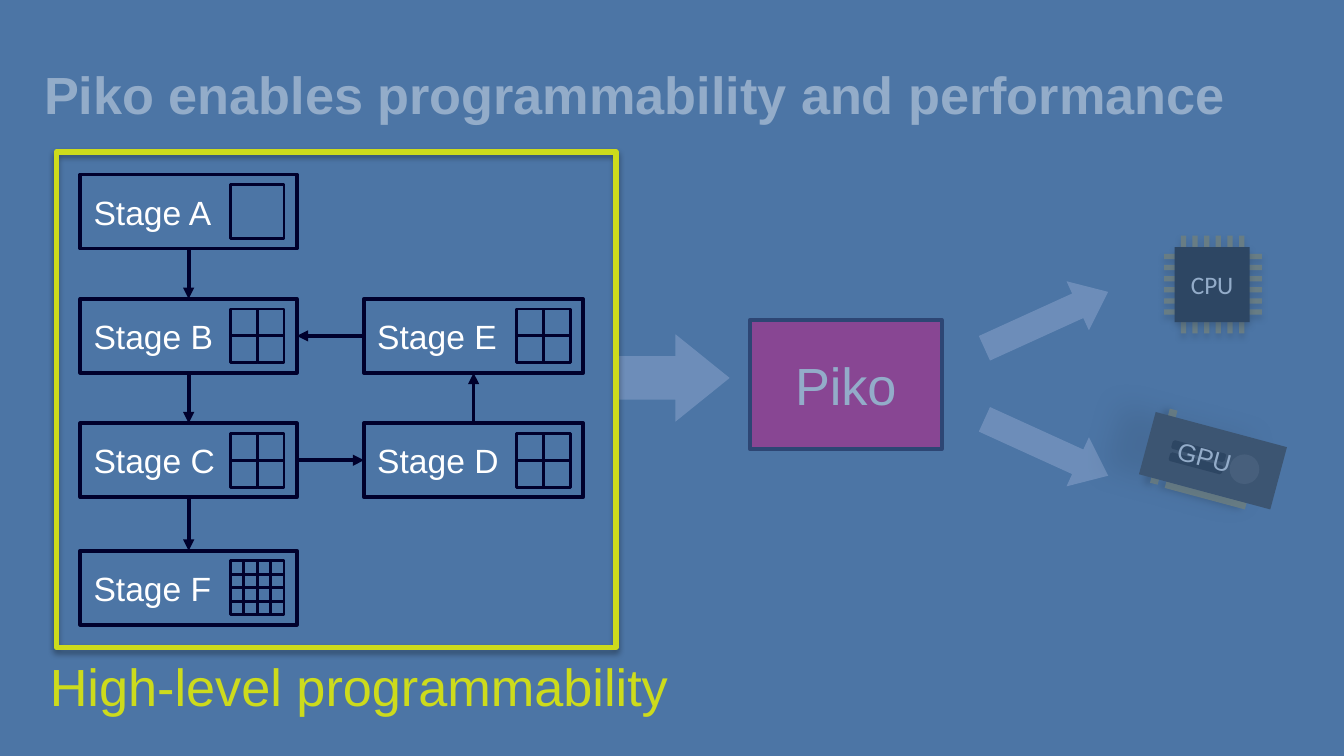
import pptx
import pptx.dml.color
import pptx.enum.shapes
import pptx.enum.text
import pptx.oxml.ns
import pptx.util
from lxml import etree

Cm, Pt = pptx.util.Cm, pptx.util.Pt
qn = pptx.oxml.ns.qn
SHAPE = pptx.enum.shapes.MSO_SHAPE
ALIGN = pptx.enum.text.PP_ALIGN
ANCHOR = pptx.enum.text.MSO_ANCHOR

BLUE, NAVY, WHITE, LIME = "4C75A5", "00002C", "FFFFFF", "CDDB1C"
PALE, PURPLE, GOLD, DARK, BLACK = "A0B3D8", "E30078", "948A54", "262626", "000000"
SOFT = (BLACK, 32, 3.5, 2.2, 90)
SIDE = (BLACK, 40, 4, 3, 180)


def rgb(color):
    return pptx.dml.color.RGBColor.from_string(color)


class Deck:
    """Holds the current slide and the shared style."""

    def __init__(self, slide, font="Arial"):
        self.slide = slide
        self.shapes = slide.shapes
        self.font = font

    def box(self, x, y, w, h, fill=None, line=None, width=2, kind=SHAPE.RECTANGLE,
            rot=0, shadow=None, alpha=None):
        sp = self.shapes.add_shape(kind, Cm(x), Cm(y), Cm(w), Cm(h))
        sp.rotation = rot
        sp.shadow.inherit = False
        if fill:
            sp.fill.solid()
            sp.fill.fore_color.rgb = rgb(fill)
        else:
            sp.fill.background()
        if line:
            sp.line.color.rgb = rgb(line)
            sp.line.width = Pt(width)
        else:
            sp.line.fill.background()
        if alpha:
            clr = sp.element.spPr.find(".//" + qn("a:srgbClr"))
            etree.SubElement(clr, qn("a:alpha"), val=str(alpha * 1000))
        if shadow:
            self.cast(sp, *shadow)
        return sp

    def cast(self, sp, color, alpha, blur, dist, angle):
        effects = sp.element.spPr.find(qn("a:effectLst"))
        outer = etree.SubElement(
            effects, qn("a:outerShdw"), blurRad=str(Pt(blur)), dist=str(Pt(dist)),
            dir=str(angle * 60000), algn="ctr", rotWithShape="0")
        clr = etree.SubElement(outer, qn("a:srgbClr"), val=color)
        etree.SubElement(clr, qn("a:alpha"), val=str(alpha * 1000))

    def put_text(self, sp, text, size, color=WHITE, align=ALIGN.CENTER,
                 anchor=ANCHOR.MIDDLE, bold=False, font=None, wrap=True):
        tf = sp.text_frame
        tf.text = text
        tf.word_wrap = wrap
        tf.vertical_anchor = anchor
        p = tf.paragraphs[0]
        p.alignment = align
        p.font.name = font or self.font
        p.font.size = Pt(size)
        p.font.bold = bold
        p.font.color.rgb = rgb(color)

    def title(self, text, x, y, w, h):
        sp = self.shapes.title
        sp.left, sp.top, sp.width, sp.height = Cm(x), Cm(y), Cm(w), Cm(h)
        self.put_text(sp, text, 28, align=ALIGN.LEFT, bold=True)
        sp.text_frame.auto_size = pptx.enum.text.MSO_AUTO_SIZE.NONE

    def label(self, text, x, y, w, h, size, rot=0, **style):
        sp = self.shapes.add_textbox(Cm(x), Cm(y), Cm(w), Cm(h))
        sp.rotation = rot
        self.put_text(sp, text, size, anchor=ANCHOR.TOP, **style)

    def block_arrow(self, x, y, w, h, rot=0):
        sp = self.box(x, y, w, h, PALE, kind=SHAPE.RIGHT_ARROW, rot=rot)
        sp.adjustments[1] = 0.62

    def stage(self, name, x, y, w, cells):
        sp = self.box(x, y, w, 1.4, BLUE, NAVY)
        self.put_text(sp, f"Stage {name}", 18, align=ALIGN.LEFT)
        side = 1.02 / cells
        for row in range(cells):
            for col in range(cells):
                self.box(x + w - 1.26 + col * side, y + 0.19 + row * side,
                         side, side, BLUE, NAVY, 1.5)
        return sp

    def link(self, start, start_side, end, end_side):
        cx = self.shapes.add_connector(
            pptx.enum.shapes.MSO_CONNECTOR.STRAIGHT, 0, 0, 0, 0)
        cx.begin_connect(start, start_side)
        cx.end_connect(end, end_side)
        cx.line.color.rgb = rgb(NAVY)
        cx.line.width = Pt(2)
        spPr = cx.element.spPr
        etree.SubElement(spPr.find(qn("a:ln")), qn("a:tailEnd"), type="triangle")
        etree.SubElement(spPr, qn("a:effectLst"))


def main():
    prs = pptx.Presentation()
    prs.slide_width, prs.slide_height = Cm(25.4), Cm(14.29)
    s = prs.slides.add_slide(prs.slide_layouts[5])
    s.background.fill.solid()
    s.background.fill.fore_color.rgb = rgb(BLUE)
    deck = Deck(s)

    # Compiler and its block arrows
    deck.block_arrow(11.61, 6.32, 2.18, 1.65)
    piko = deck.box(14.17, 6.05, 3.63, 2.44, PURPLE, NAVY)
    deck.put_text(piko, "Piko", 28)
    deck.block_arrow(18.49, 5.54, 2.57, 1.02, rot=335.5)
    deck.block_arrow(18.49, 7.95, 2.57, 1.02, rot=24.5)

    # CPU with six pins each way
    for i in range(6):
        deck.box(21.44 + 0.22 * i, 5.33, 1.85, 0.1, GOLD, rot=90, shadow=SOFT)
        deck.box(22, 4.8 + 0.21 * i, 1.85, 0.1, GOLD, shadow=SOFT)
    cpu = deck.box(22.2, 4.67, 1.42, 1.42, BLACK, shadow=SOFT)
    deck.put_text(cpu, "CPU", 13.5, font="Calibri", wrap=False)

    # GPU card, tilted
    tilt = 15
    deck.box(22, 9.3, 1.57, 0.13, GOLD, rot=tilt, shadow=SIDE)
    deck.box(21.92, 7.72, 0.15, 1.45, GOLD, rot=tilt, shadow=SIDE)
    deck.box(21.64, 8.1, 2.57, 1.22, DARK, rot=tilt, shadow=(BLACK, 18, 14.5, 19, 192))
    deck.box(23.24, 8.59, 0.56, 0.56, "404040", kind=SHAPE.OVAL, rot=tilt)
    for x, y in ((22.17, 8.48), (22.12, 8.71)):
        deck.box(x, y, 0.97, 0.1, BLACK, BLACK, rot=tilt)
    deck.label("GPU", 22, 8.23, 1.55, 0.84, 13.5, rot=tilt, align=ALIGN.LEFT, wrap=False)

    # Veil that dims everything so far
    deck.box(0, 0, 25.4, 14.29, BLUE, alpha=60)

    deck.title("Piko enables programmability and performance", 0.58, 0.58, 24.31, 2.39)

    # Pipeline stages: name, left and width, top, cells per side
    left, right = (1.52, 4.09), (6.88, 4.14)
    plan = (("A", left, 3.3, 1), ("B", left, 5.65, 2), ("C", left, 8, 2),
            ("D", right, 8, 2), ("E", right, 5.65, 2), ("F", left, 10.41, 4))
    stages = {name: deck.stage(name, x, y, w, cells)
              for name, (x, w), y, cells in plan}

    # Flow between stages (0 top, 1 left, 2 bottom, 3 right)
    for start, a, end, b in (("A", 2, "B", 0), ("B", 2, "C", 0), ("C", 2, "F", 0),
                             ("C", 3, "D", 1), ("D", 0, "E", 2), ("E", 1, "B", 3)):
        deck.link(stages[start], a, stages[end], b)

    # Highlight frame and caption
    deck.label("High-level programmability", 0.58, 12.24, 12.4, 1.45, 28, color=LIME)
    deck.box(1.07, 2.87, 10.57, 9.37, line=LIME, width=3, shadow=(BLACK, 35, 3.1, 1.8, 90))

    prs.save("out.pptx")


if __name__ == "__main__":
    main()
